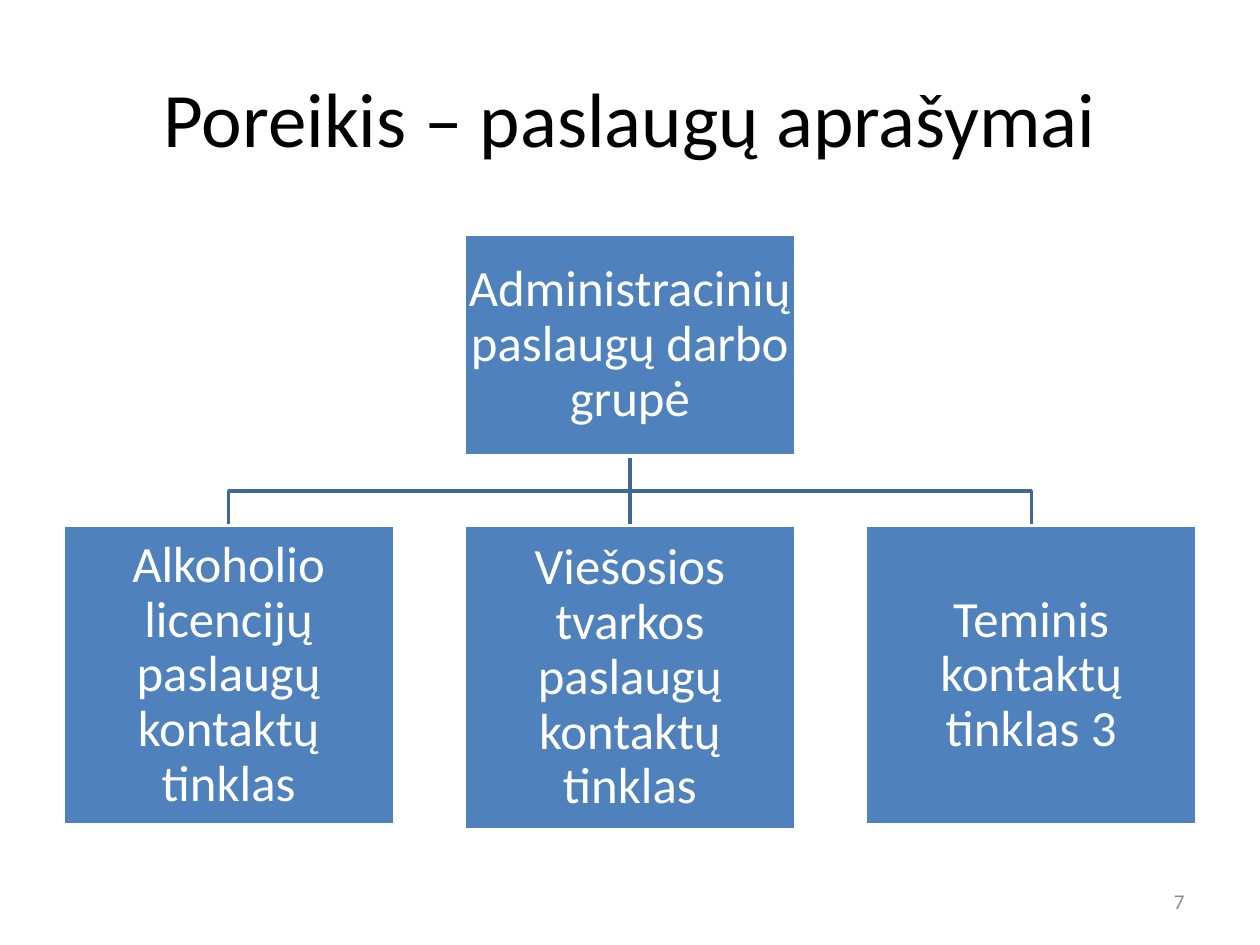
from dataclasses import dataclass

from lxml import etree
from pptx import Presentation
from pptx.dml.color import RGBColor
from pptx.enum.shapes import MSO_CONNECTOR as Connector, MSO_SHAPE as Shape
from pptx.enum.text import MSO_ANCHOR as Anchor, PP_ALIGN as Align
from pptx.oxml.ns import qn
from pptx.util import Pt


@dataclass(frozen=True)
class Theme:
    font: str = "Calibri"
    black: RGBColor = RGBColor(0x00, 0x00, 0x00)
    white: RGBColor = RGBColor(0xFF, 0xFF, 0xFF)
    grey: RGBColor = RGBColor(0x8C, 0x8C, 0x8C)
    box: RGBColor = RGBColor(0x4F, 0x81, 0xBD)
    branch: RGBColor = RGBColor(0x3F, 0x67, 0x97)
    title_size: float = 44
    box_size: float = 29
    number_size: float = 12
    line_width: float = 2


THEME = Theme()

SLIDE_WIDTH, SLIDE_HEIGHT = 720, 540
MARGIN = 36
BOX_WIDTH = 189.4
ROOT_TOP, ROOT_HEIGHT = 134, 126.6
CHILD_TOP = 300.4
CHILDREN = [
    ("Alkoholio licencijų paslaugų kontaktų tinklas", 171.2),
    ("Viešosios tvarkos paslaugų kontaktų tinklas", 174),
    ("Teminis kontaktų tinklas 3", 171.2),
]


def write_text(shape, text, *, size, color, align=Align.CENTER, spacing=None, inset=None):
    frame = shape.text_frame
    frame.word_wrap = True
    frame.vertical_anchor = Anchor.MIDDLE
    if inset is not None:
        frame.margin_left = frame.margin_right = Pt(inset)
        frame.margin_top = frame.margin_bottom = Pt(inset)
    paragraph = frame.paragraphs[0]
    paragraph.alignment = align
    paragraph.line_spacing = spacing
    run = paragraph.add_run()
    run.text = text
    run.font.name = THEME.font
    run.font.size = Pt(size)
    run.font.color.rgb = color


def place(shape, left, top, width, height):
    shape.left, shape.top = Pt(left), Pt(top)
    shape.width, shape.height = Pt(width), Pt(height)


def style_line(shape, color):
    shape.line.color.rgb = color
    shape.line.width = Pt(THEME.line_width)


def add_title(slide, text):
    title = slide.shapes.title
    place(title, MARGIN, 21.6, SLIDE_WIDTH - 2 * MARGIN, 90)
    write_text(title, text, size=THEME.title_size, color=THEME.black)


def add_box(slide, text, center, top, height):
    box = slide.shapes.add_shape(
        Shape.RECTANGLE, Pt(center - BOX_WIDTH / 2), Pt(top), Pt(BOX_WIDTH), Pt(height)
    )
    box.shadow.inherit = False
    box.fill.solid()
    box.fill.fore_color.rgb = THEME.box
    style_line(box, THEME.white)
    write_text(box, text, size=THEME.box_size, color=THEME.white, spacing=0.9, inset=1.4)


def add_branch(slide, start, end, top, bottom):
    """Join a parent to a child: straight when aligned, else with two bends."""
    if start == end:
        branch = slide.shapes.add_connector(
            Connector.STRAIGHT, Pt(start), Pt(top), Pt(end), Pt(bottom)
        )
        etree.SubElement(branch.line._get_or_add_ln().getparent(), qn("a:effectLst"))
    else:
        middle = (top + bottom) / 2
        builder = slide.shapes.build_freeform(Pt(start), Pt(top))
        corners = [(start, middle), (end, middle), (end, bottom)]
        builder.add_line_segments([(Pt(x), Pt(y)) for x, y in corners], close=False)
        branch = builder.convert_to_shape()
        branch.fill.background()
        branch.shadow.inherit = False
    style_line(branch, THEME.branch)


def add_slide_number(slide, text):
    width = 168
    box = slide.shapes.add_textbox(
        Pt(SLIDE_WIDTH - MARGIN - width), Pt(500.5), Pt(width), Pt(28.8)
    )
    write_text(box, text, size=THEME.number_size, color=THEME.grey, align=Align.RIGHT)


def main():
    presentation = Presentation()
    presentation.slide_width, presentation.slide_height = Pt(SLIDE_WIDTH), Pt(SLIDE_HEIGHT)
    slide = presentation.slides.add_slide(presentation.slide_layouts.get_by_name("Title Only"))
    add_title(slide, "Poreikis – paslaugų aprašymai")

    root_center = SLIDE_WIDTH / 2
    first_center = MARGIN + BOX_WIDTH / 2
    pitch = (SLIDE_WIDTH - 2 * first_center) / (len(CHILDREN) - 1)
    centers = [first_center + index * pitch for index in range(len(CHILDREN))]

    for center in centers:
        add_branch(slide, root_center, center, ROOT_TOP + ROOT_HEIGHT, CHILD_TOP)
    add_box(slide, "Administracinių paslaugų darbo grupė", root_center, ROOT_TOP, ROOT_HEIGHT)
    for center, (text, height) in zip(centers, CHILDREN):
        add_box(slide, text, center, CHILD_TOP, height)

    add_slide_number(slide, "7")
    presentation.save("out.pptx")


if __name__ == "__main__":
    main()
